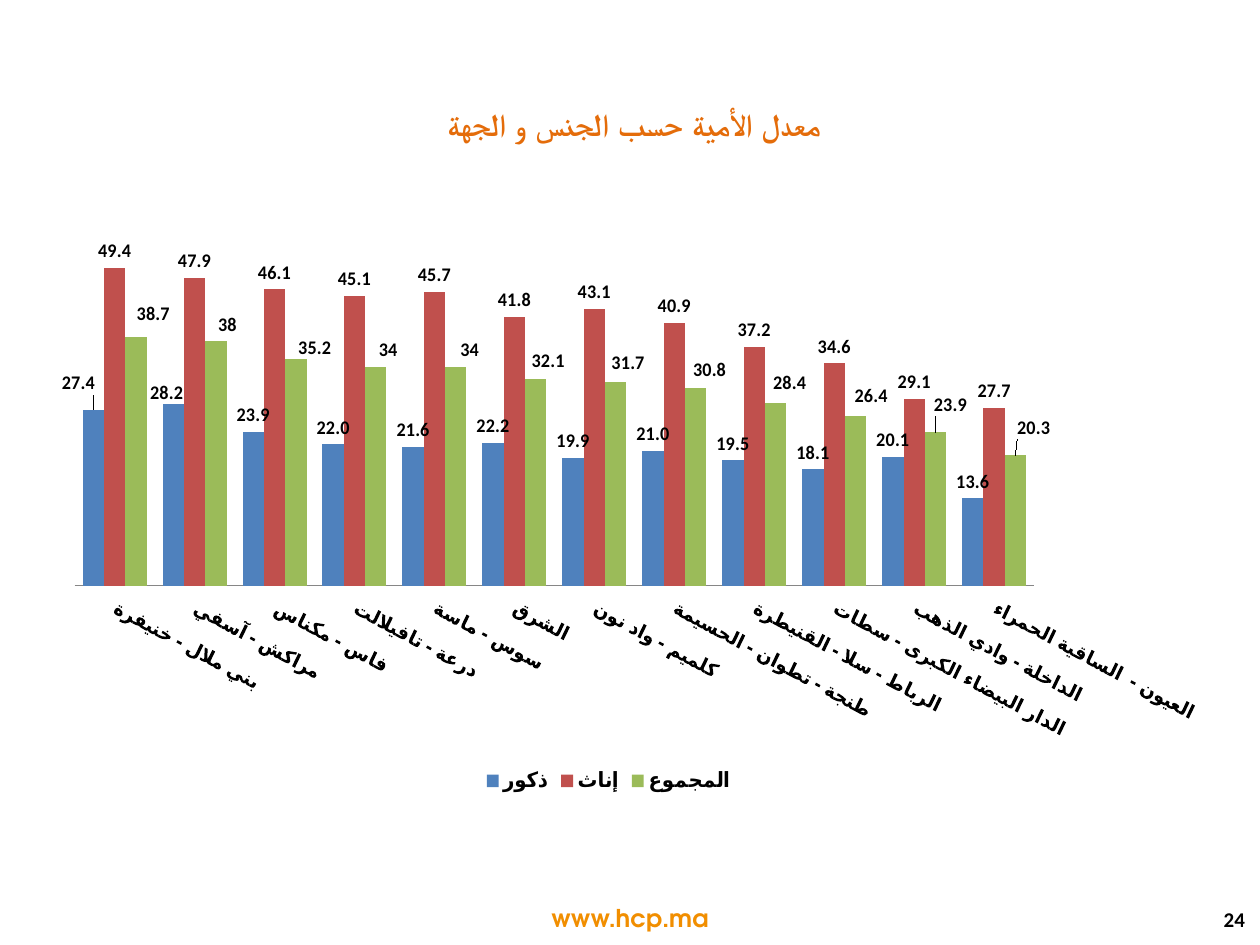
from lxml import etree
from pptx import Presentation
from pptx.chart.data import CategoryChartData
from pptx.dml.color import RGBColor
from pptx.enum.chart import (XL_CHART_TYPE, XL_LABEL_POSITION, XL_LEGEND_POSITION,
                             XL_TICK_LABEL_POSITION, XL_TICK_MARK)
from pptx.enum.text import MSO_ANCHOR, PP_ALIGN
from pptx.oxml.ns import qn
from pptx.util import Pt

COLUMNS = XL_CHART_TYPE.COLUMN_CLUSTERED
OUTSIDE_END = XL_LABEL_POSITION.OUTSIDE_END
LEGEND_BOTTOM = XL_LEGEND_POSITION.BOTTOM
LABELS_LOW = XL_TICK_LABEL_POSITION.LOW
NO_TICK = XL_TICK_MARK.NONE
MIDDLE = MSO_ANCHOR.MIDDLE
CENTER, RIGHT = PP_ALIGN.CENTER, PP_ALIGN.RIGHT

BLACK = RGBColor(0x00, 0x00, 0x00)
GRAY = RGBColor(0x86, 0x86, 0x86)
ORANGE = RGBColor(0xE4, 0x6C, 0x0A)
AMBER = RGBColor(0xF1, 0x8E, 0x00)
BLUE = RGBColor(0x4F, 0x81, 0xBD)
RED = RGBColor(0xC0, 0x50, 0x4D)
GREEN = RGBColor(0x9B, 0xBB, 0x59)

REGIONS = [
    "بني ملال - خنيفرة", "مراكش - آسفي", "فاس - مكناس", "درعة - تافيلالت",
    "سوس - ماسة", "الشرق", "كلميم - واد نون", "طنجة - تطوان - الحسيمة",
    "الرباط - سلا - القنيطرة", "الدار البيضاء الكبرى - سطات",
    "الداخلة - وادي الذهب", "العيون -  الساقية الحمراء",
]

# Name, colour, label format, values, label shifts in points (right, down)
SERIES = [
    ("ذكور", BLUE, "0.0",
     [27.4, 28.2, 23.9, 22, 21.6, 22.2, 19.9, 21, 19.5, 18.1, 20.1, 13.6],
     [(-9, -5.5), (-4, 3)]),
    ("إناث", RED, "0.0",
     [49.4, 47.9, 46.1, 45.1, 45.7, 41.8, 43.1, 40.9, 37.2, 34.6, 29.1, 27.7],
     []),
    ("المجموع", GREEN, "General",
     [38.7, 38, 35.2, 34, 34, 32.1, 31.7, 30.8, 28.4, 26.4, 23.9, 20.3],
     [(10.5, -3.5), (7, 0), (11.5, 3), (7.5, -0.5), (8.5, -0.5), (7.5, -1),
      (7.5, -1.5), (8.5, -0.5), (8.5, -2), (9.5, -2), (9, -6), (11, -6)]),
]


def set_font(font, color=BLACK, **values):
    for key, value in {"name": "Calibri", "bold": True, **values}.items():
        setattr(font, key, value)
    font.color.rgb = color


def add_layout(parent, position, **values):
    """Insert a manual layout as the child at the given position."""
    layout = etree.Element(qn("c:layout"))
    manual = etree.SubElement(layout, qn("c:manualLayout"))
    for tag, value in values.items():
        etree.SubElement(manual, qn("c:" + tag)).set("val", str(value))
    for old in parent.findall(qn("c:layout")):
        parent.remove(old)
    parent.insert(position, layout)


class SlideBuilder:
    def __init__(self, page):
        self.page = page

    def text(self, words, left, top, width, height, align, color, rtl=False, **values):
        box = self.page.shapes.add_textbox(Pt(left), Pt(top), Pt(width), Pt(height))
        frame = box.text_frame
        frame.word_wrap = True
        frame.vertical_anchor = MIDDLE
        para = frame.paragraphs[0]
        para.alignment = align
        if rtl:
            para._p.get_or_add_pPr().set("rtl", "1")
        span = para.add_run()
        span.text = words
        set_font(span.font, color, **values)

    def column_chart(self, left, top, width, height):
        data = CategoryChartData()
        data.categories = REGIONS
        for name, _, _, values, _ in SERIES:
            data.add_series(name, values)
        chart = self.page.shapes.add_chart(
            COLUMNS, Pt(left), Pt(top), Pt(width), Pt(height), data).chart
        set_font(chart.font, size=Pt(11))
        chart.has_title = False
        chart.has_legend = True
        chart.legend.position = LEGEND_BOTTOM
        chart.legend.include_in_layout = False
        set_font(chart.legend.font, size=Pt(12))
        self.axes(chart)

        plot = chart.plots[0]
        plot.gap_width = 75
        plot.overlap = 0
        plot.vary_by_categories = False
        for series, (_, color, number_format, _, shifts) in zip(plot.series, SERIES):
            series.format.fill.solid()
            series.format.fill.fore_color.rgb = color
            series.invert_if_negative = False
            self.labels(series, number_format, [(x / width, y / height) for x, y in shifts])

        area = chart._chartSpace.find(".//" + qn("c:plotArea"))
        add_layout(area, 0, layoutTarget="inner", xMode="edge", yMode="edge",
                   x=0.002, y=0.022, w=0.895, h=0.633)

    def axes(self, chart):
        scale = chart.value_axis
        scale.minimum_scale, scale.maximum_scale = 0, 60
        scale.has_major_gridlines = False
        scale.visible = False
        names = chart.category_axis
        names.major_tick_mark = names.minor_tick_mark = NO_TICK
        names.tick_label_position = LABELS_LOW
        names.format.line.color.rgb = GRAY
        set_font(names.tick_labels.font, size=Pt(11))
        body = names._element.find(qn("c:txPr")).find(qn("a:bodyPr"))
        body.set("rot", str(27 * 60000))
        body.set("vert", "horz")

    def labels(self, series, number_format, shifts):
        labels = series.data_labels
        labels.show_value = True
        labels.position = OUTSIDE_END
        labels.number_format = number_format
        labels.number_format_is_linked = False
        set_font(labels.font, size=Pt(11))
        for index in range(len(shifts)):
            label = series.points[index].data_label
            label.position = OUTSIDE_END
            set_font(label.font, size=Pt(11))
        for item, (x, y) in zip(labels._element.findall(qn("c:dLbl")), shifts):
            add_layout(item, 1, x=round(x, 4), y=round(y, 4))


def main():
    deck = Presentation()
    deck.slide_width, deck.slide_height = Pt(720), Pt(540)
    builder = SlideBuilder(deck.slides.add_slide(deck.slide_layouts[6]))

    # Footer
    builder.text("www.hcp.ma", 275, 512.6, 170, 24, CENTER, AMBER,
                 name="TeX Gyre Adventor", size=Pt(14))
    builder.text("24", 609, 512.6, 109.5, 25, RIGHT, BLACK, size=Pt(12))

    # Illiteracy rates by sex and region
    builder.column_chart(35.3, 106.6, 648.7, 348.5)

    # Title
    builder.text("معدل الأمية حسب الجنس و الجهة", 50.4, 56.2, 624.2, 28.8, CENTER,
                 ORANGE, rtl=True, name="Times New Roman", size=Pt(18))
    deck.save("out.pptx")


if __name__ == "__main__":
    main()
